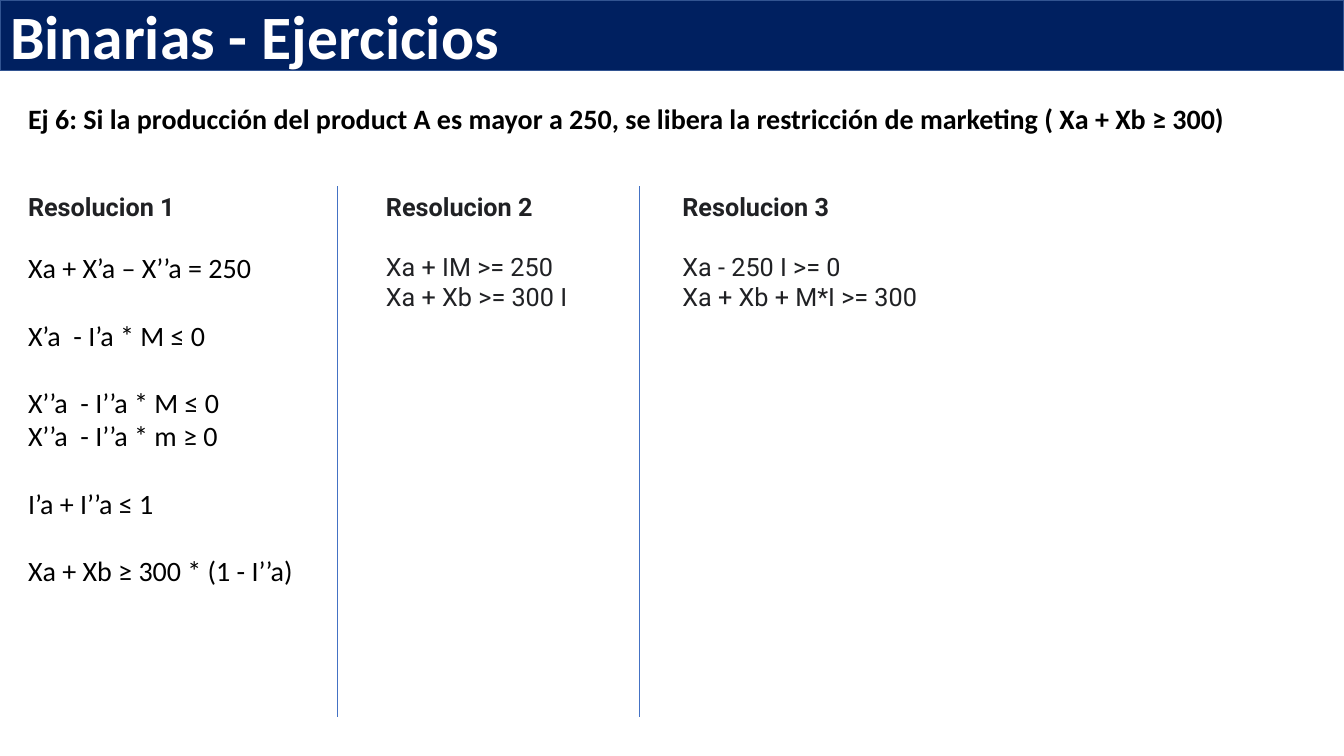
from dataclasses import dataclass

from lxml.etree import SubElement
from pptx import Presentation
from pptx.dml.color import RGBColor
from pptx.enum.shapes import MSO_CONNECTOR
from pptx.enum.text import MSO_ANCHOR, MSO_AUTO_SIZE, PP_ALIGN
from pptx.oxml.ns import qn
from pptx.util import Emu, Pt

PX = 9144  # 100 px to the inch
WIDE, HIGH = 1333, 750
HEAD_TOP, BODY_TOP, RULE_END = 185, 244, 711
HEAD_WIDE, HEAD_HIGH = 226, 40

COLORS = {
    "navy": "002060",
    "edge": "325491",
    "rule": "4472C4",
    "white": "FFFFFF",
    "black": "000000",
    "dark": "202124",
}
FONTS = {
    "title": {"name": "Calibri", "size": Pt(44), "bold": True},
    "task": {"name": "Calibri", "size": Pt(20), "bold": True},
    "head": {"name": "Roboto", "size": Pt(18), "bold": True},
    "math": {"name": "Calibri", "size": Pt(20), "bold": False},
    "plain": {"name": "Roboto", "size": Pt(18), "bold": False},
}
INKS = {"title": "white", "task": "black", "head": "dark", "math": "black", "plain": "dark"}


@dataclass
class Column:
    """One solution; each group of lines is set apart from the one before."""
    left: int
    width: int
    height: int
    font: str
    groups: list[list[str]]


COLUMNS = [
    Column(18, 360, 414, "math", [
        ["Xa + X’a – X’’a = 250"],
        ["X’a  - I’a * M ≤ 0"],
        ["X’’a  - I’’a * M ≤ 0", "X’’a  - I’’a * m ≥ 0"],
        ["I’a + I’’a ≤ 1"],
        ["Xa + Xb ≥ 300 * (1 - I’’a)"],
    ]),
    Column(373, 226, 71, "plain", [["Xa + IM >= 250", "Xa + Xb >= 300 I"]]),
    Column(667, 272, 71, "plain", [["Xa - 250 I >= 0", "Xa + Xb + M*I >= 300"]]),
]
RULES = [335, 634]


def px(num: int) -> Emu:
    return Emu(num * PX)


def color(name: str) -> RGBColor:
    return RGBColor.from_string(COLORS[name])


def place(shape, left: int, top: int, width: int, height: int) -> None:
    box = {"left": left, "top": top, "width": width, "height": height}
    for key, num in box.items():
        setattr(shape, key, px(num))


def style(para, kind: str) -> None:
    for key, value in FONTS[kind].items():
        setattr(para.font, key, value)
    para.font.color.rgb = color(INKS[kind])
    para.alignment = PP_ALIGN.LEFT


def add_title(slide, text: str) -> None:
    title = slide.shapes.title
    place(title, 0, 0, WIDE, 70)
    title.fill.solid()
    title.fill.fore_color.rgb = color("navy")
    title.line.color.rgb = color("edge")
    title.line.width = Pt(1)
    frame = title.text_frame
    frame.text = text
    frame.auto_size = MSO_AUTO_SIZE.NONE
    frame.vertical_anchor = MSO_ANCHOR.MIDDLE
    style(frame.paragraphs[0], "title")


def add_text(slide, box: tuple[int, int, int, int], kind: str,
             groups: list[list[str]]) -> None:
    frame = slide.shapes.add_textbox(*map(px, box)).text_frame
    frame.word_wrap = True
    frame.auto_size = MSO_AUTO_SIZE.SHAPE_TO_FIT_TEXT
    frame.text = "\n".join(line for group in groups for line in group)
    paras = iter(frame.paragraphs)
    for part, group in enumerate(groups):
        for row, _ in enumerate(group):
            para = next(paras)
            style(para, kind)
            if part and row == 0:
                para.space_before = Pt(24)


def add_rule(slide, left: int) -> None:
    rule = slide.shapes.add_connector(
        MSO_CONNECTOR.STRAIGHT, px(left), px(HEAD_TOP), px(left), px(RULE_END))
    rule.line.color.rgb = color("rule")
    rule.line.width = Pt(0.5)
    SubElement(rule.element.spPr, qn("a:effectLst"))


def main() -> None:
    deck = Presentation()
    deck.slide_width, deck.slide_height = px(WIDE), px(HIGH)
    slide = deck.slides.add_slide(deck.slide_layouts.get_by_name("Title Only"))
    add_title(slide, "Binarias - Ejercicios")
    add_text(slide, (18, 96, 1264, 44), "task", [[
        "Ej 6: Si la producción del product A es mayor a 250, "
        "se libera la restricción de marketing ( Xa + Xb ≥ 300)"]])
    for num, col in enumerate(COLUMNS, 1):
        add_text(slide, (col.left, HEAD_TOP, HEAD_WIDE, HEAD_HIGH), "head",
                 [[f"Resolucion {num}"]])
        add_text(slide, (col.left, BODY_TOP, col.width, col.height), col.font, col.groups)
    for left in RULES:
        add_rule(slide, left)
    deck.save("out.pptx")


if __name__ == "__main__":
    main()
